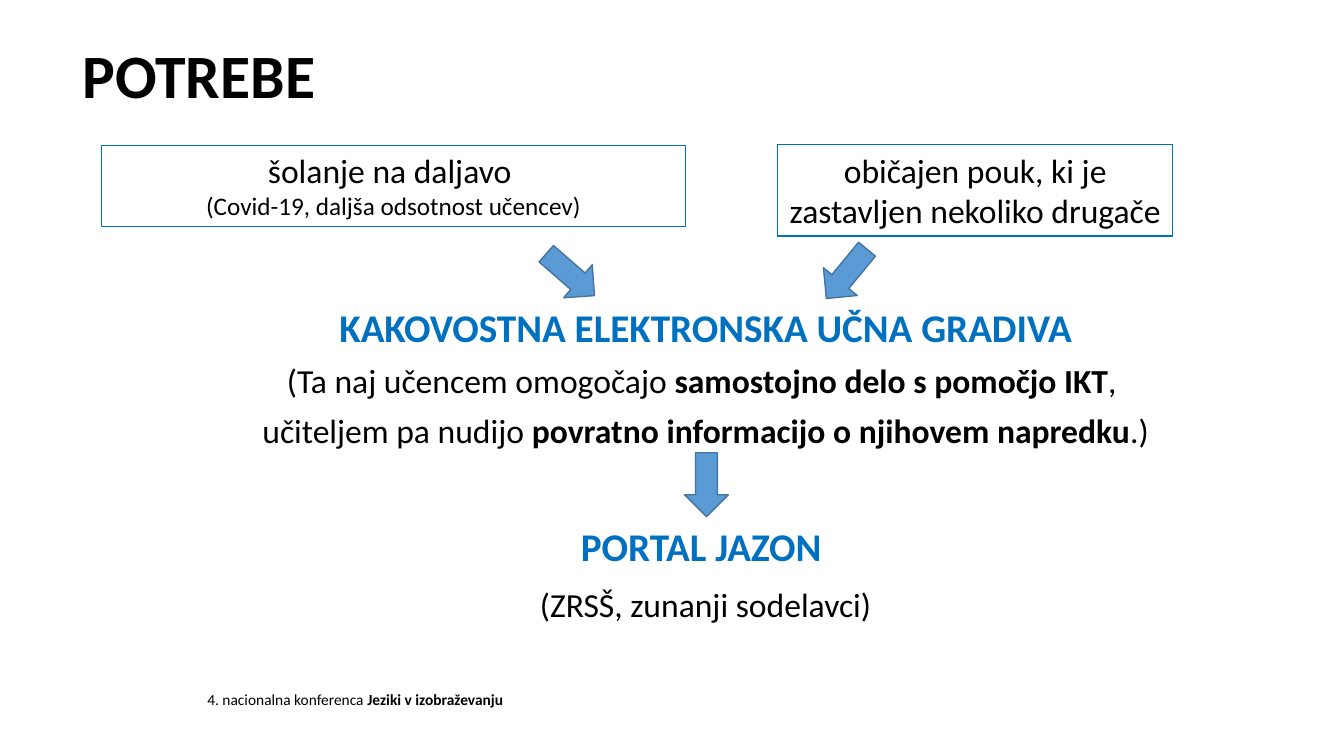
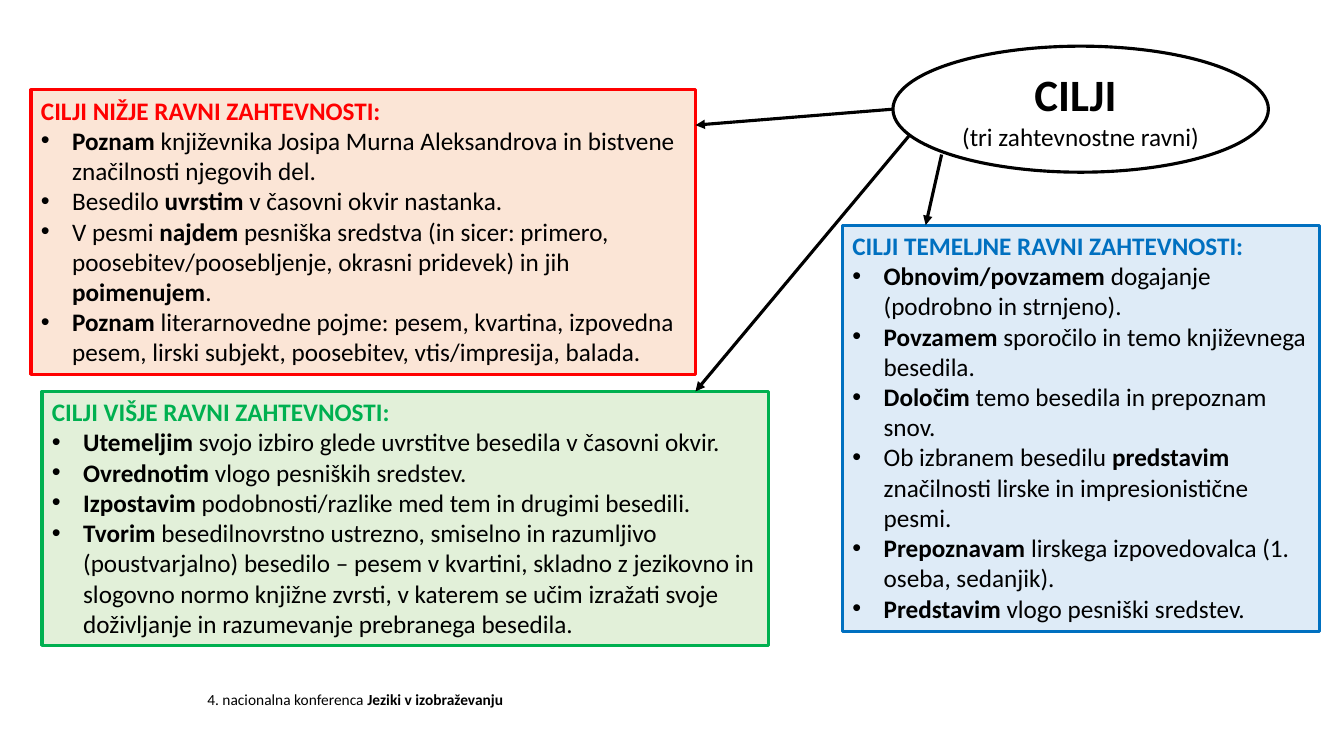
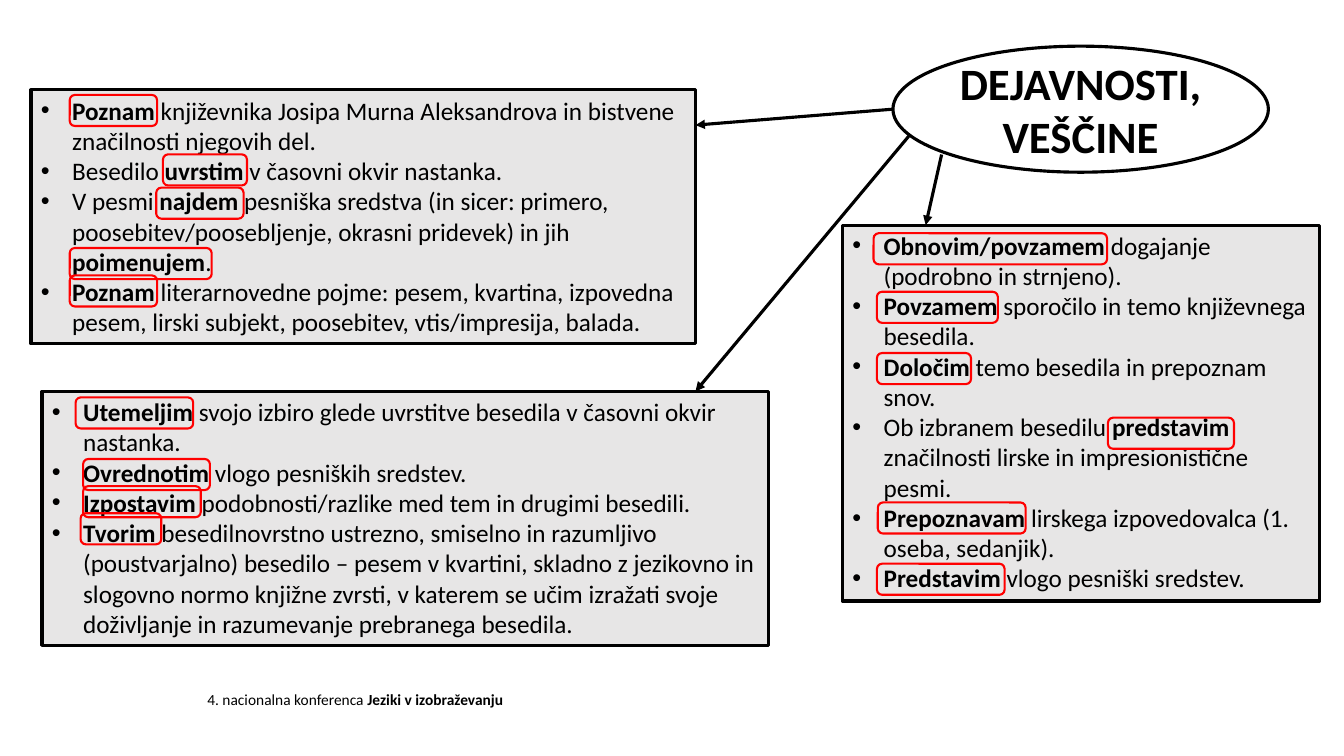
import pptx
import pptx.util
import pptx.dml.color
import pptx.enum.shapes
import pptx.enum.text
import pptx.oxml.ns
import lxml.etree

RGB = pptx.dml.color.RGBColor
KIND = pptx.enum.shapes.MSO_SHAPE
ALIGN = pptx.enum.text.PP_ALIGN
ANCHOR = pptx.enum.text.MSO_ANCHOR
Pt = pptx.util.Pt

BLACK = RGB(0, 0, 0)
BLUE = RGB(0x00, 0x70, 0xC0)
GREEN = RGB(0x00, 0xB0, 0x50)
RED = RGB(0xFF, 0, 0)
STEEL = RGB(0x5B, 0x9B, 0xD5)
NAVY = RGB(0x43, 0x73, 0x9E)
MINT = RGB(0xE2, 0xF0, 0xD9)
PEACH = RGB(0xFB, 0xE5, 0xD6)
SKY = RGB(0xDE, 0xEB, 0xF7)
GRAY = RGB(0xE7, 0xE6, 0xE6)
FONT = "Calibri"

# The slide is a grid of 160 columns by 90 rows
COLS, ROWS = 160, 90
WIDE, HIGH = pptx.util.Inches(13.333), pptx.util.Inches(7.5)
LINE, INSET = 3.63, 0.6    # rows per 18 pt line, and above the first line
BULLET = 0.31              # hanging indent, inches


def cells(*box):
    """Turn columns and rows, in turn, into lengths."""
    return [round(n * (HIGH / ROWS if i % 2 else WIDE / COLS))
            for i, n in enumerate(box)]


def write(frame, items, align=ALIGN.LEFT, anchor=ANCHOR.TOP):
    """Fill a frame with (text, size, colour, options); *stars* mark bold."""
    frame.word_wrap = True
    frame.vertical_anchor = anchor
    for i, (text, size, color, opts) in enumerate(items):
        para = frame.add_paragraph() if i else frame.paragraphs[0]
        para.alignment = align
        para.space_before = Pt(opts.get("gap", 0))
        para.line_spacing = opts.get("lead", 1.0)
        if opts.get("dot"):
            props = para._p.get_or_add_pPr()
            indent = pptx.util.Inches(BULLET)
            props.set("marL", str(indent))
            props.set("indent", str(-indent))
            tag = pptx.oxml.ns.qn
            lxml.etree.SubElement(props, tag("a:buFont"), typeface="Arial")
            lxml.etree.SubElement(props, tag("a:buChar"), char="•")
        font = para.font
        font.name, font.size = FONT, Pt(size)
        font.color.rgb = color
        for k, part in enumerate(text.split("*")):
            if part:
                run = para.add_run()
                run.text = part
                run.font.bold = k % 2 == 1


def form(slide, kind, box, line, width, fill=None):
    shape = slide.shapes.add_shape(kind, *cells(*box))
    shape.shadow.inherit = False
    if fill is None:
        shape.fill.background()
    else:
        shape.fill.solid()
        shape.fill.fore_color.rgb = fill
    shape.line.color.rgb = line
    shape.line.width = Pt(width)
    return shape


def note(slide, box, items, align=ALIGN.LEFT):
    write(slide.shapes.add_textbox(*cells(*box)).text_frame, items, align)


def begin(deck, layout):
    """Add a slide with the shared footer."""
    slide = deck.slides.add_slide(deck.slide_layouts.get_by_name(layout))
    note(slide, (23.5, 81.6, 40.8, 3.5),
         [("4. nacionalna konferenca *Jeziki v izobraževanju*", 11, BLACK, {})])
    return slide


def head(slide, text):
    title = slide.shapes.title
    title.left, title.top, title.width, title.height = cells(8.6, 1.6, 138, 15.4)
    write(title.text_frame, [(f"*{text}*", 44, BLACK, {"lead": 0.9})],
          anchor=ANCHOR.MIDDLE)


# Needs slide
def needs(deck):
    slide = begin(deck, "Title Only")
    head(slide, "POTREBE")
    first, tight = {"lead": 0.9}, {"lead": 0.9, "gap": 10}
    note(slide, (13.4, 36.1, 141.2, 42), [
        ("*KAKOVOSTNA ELEKTRONSKA UČNA GRADIVA*", 28, BLUE, first),
        ("(Ta naj učencem omogočajo *samostojno delo s pomočjo IKT*, ",
         24, BLACK, tight),
        ("učiteljem pa nudijo *povratno informacijo o njihovem napredku*.)",
         24, BLACK, tight),
        ("*PORTAL JAZON *", 28, BLUE, {"gap": 51}),
        ("(ZRSŠ, zunanji sodelavci)", 24, BLACK, {"gap": 10}),
    ], ALIGN.CENTER)
    for left, top, turn in ((65.3, 28.9, 311), (81.5, 53.9, 0), (98.2, 28.8, 39.5)):
        arrow = form(slide, KIND.DOWN_ARROW, (left, top, 5.2, 7.6), NAVY, 1, STEEL)
        arrow.rotation = turn
    frames = (
        ((92.6, 17.2, 47, 10.9),
         [("običajen pouk, ki je zastavljen nekoliko drugače", 24, BLACK, {})]),
        ((12.1, 17.3, 69.5, 9.7),
         [("šolanje na daljavo ", 24, BLACK, {}),
          ("(Covid-19, daljša odsotnost učencev)", 18, BLACK, {})]),
    )
    for box, items in frames:
        shape = form(slide, KIND.RECTANGLE, box, BLUE, 0.75)
        write(shape.text_frame, items, ALIGN.CENTER)


# Goals of the three levels: place, bullets, and line count of the bullets
UPPER = ((5, 46.6, 86.5), [
    "*Utemeljim *svojo izbiro glede uvrstitve besedila v časovni okvir.",
    "*Ovrednotim* vlogo pesniških sredstev.",
    "*Izpostavim* podobnosti/razlike med tem in drugimi besedili.",
    "*Tvorim *besedilnovrstno ustrezno, smiselno in razumljivo (poustvarjalno) "
    "besedilo – pesem v kvartini, skladno z jezikovno in slogovno normo knjižne "
    "zvrsti, v katerem se učim izražati svoje doživljanje in razumevanje "
    "prebranega besedila.",
], 7)
LOWER = ((3.7, 10.7, 79.1), [
    "*Poznam *književnika Josipa Murna Aleksandrova in bistvene značilnosti "
    "njegovih del.",
    "Besedilo *uvrstim* v časovni okvir nastanka.",
    "V pesmi *najdem* pesniška sredstva (in sicer: primero, "
    "poosebitev/poosebljenje, okrasni pridevek) in jih *poimenujem*.",
    "*Poznam* literarnovedne pojme: pesem, kvartina, izpovedna pesem, lirski "
    "subjekt, poosebitev, vtis/impresija, balada.",
], 8)
BASE = ((100.3, 26.8, 56.8), [
    "*Obnovim/povzamem* dogajanje (podrobno in strnjeno).",
    "*Povzamem* sporočilo in temo književnega besedila.",
    "*Določim* temo besedila in prepoznam snov.",
    "Ob izbranem besedilu *predstavim *značilnosti lirske in impresionistične "
    "pesmi.",
    "*Prepoznavam* lirskega izpovedovalca (1. oseba, sedanjik).",
    "*Predstavim *vlogo pesniški sredstev.",
], 12)
# The skills slide names the time frame in full, which takes one more line
LONG = (UPPER[0], [UPPER[1][0].replace("okvir.", "okvir nastanka.")] + UPPER[1][1:], 8)


def panel(slide, level, line, fill, title=None):
    place, goals, count = level
    items = [(f"*{title}*", 18, line, {})] if title else []
    items += [(goal, 18, BLACK, {"dot": True}) for goal in goals]
    tall = (count + bool(title)) * LINE + 2 * INSET
    shape = form(slide, KIND.RECTANGLE, (*place, tall), line, 2.25, fill)
    write(shape.text_frame, items)


def hub(slide, items):
    """Draw the topic ellipse and its arrows to the three panels."""
    oval = form(slide, KIND.OVAL, (106.3, 5.5, 44.7, 15), BLACK, 2.25)
    write(oval.text_frame, items, ALIGN.CENTER, ANCHOR.MIDDLE)
    for ends in ((106.3, 13, 82.8, 14.9), (108.2, 16.2, 82.8, 46.6),
                 (112.1, 18.4, 110.2, 26.8)):
        link = slide.shapes.add_connector(
            pptx.enum.shapes.MSO_CONNECTOR.STRAIGHT, *cells(*ends))
        link.line.color.rgb = BLACK
        link.line.width = Pt(2.25)
        tag = pptx.oxml.ns.qn
        lxml.etree.SubElement(link.line._get_or_add_ln(), tag("a:tailEnd"),
                              type="triangle")
        lxml.etree.SubElement(link._element.spPr, tag("a:effectLst"))


def marks(slide, level, spots):
    """Ring words in a panel: column, text line, width."""
    left, top, _ = level[0]
    for col, row, wide in spots:
        form(slide, KIND.ROUNDED_RECTANGLE,
             (left + col, top + INSET + row * LINE, wide, 3.7), RED, 1.5)


# Goals slide
def goals(deck):
    slide = begin(deck, "Blank")
    panel(slide, UPPER, GREEN, MINT, "CILJI VIŠJE RAVNI ZAHTEVNOSTI:")
    panel(slide, LOWER, RED, PEACH, "CILJI NIŽJE RAVNI ZAHTEVNOSTI:")
    panel(slide, BASE, BLUE, SKY, "CILJI TEMELJNE RAVNI ZAHTEVNOSTI:")
    hub(slide, [("*CILJI *", 32, BLACK, {}),
                ("(tri zahtevnostne ravni)", 18, BLACK, {})])


# Skills slide
def skills(deck):
    slide = begin(deck, "Blank")
    for level in (LONG, LOWER, BASE):
        panel(slide, level, BLACK, GRAY)
    hub(slide, [("*DEJAVNOSTI, VEŠČINE*", 32, BLACK, {})])
    marks(slide, LOWER, [(4.6, 0, 10.4), (15.7, 1.95, 10), (14.9, 3.04, 10.4),
                         (4.6, 5.02, 16.9), (4.6, 5.92, 10.4)])
    marks(slide, LONG, [(4, 0.03, 14), (4.9, 2.05, 15.1), (4.9, 2.94, 14),
                        (4.6, 3.83, 9.6)])
    marks(slide, BASE, [(3.7, 0.1, 27.8), (4.1, 2.02, 14.4), (4.1, 4.03, 11.2),
                        (31.6, 6.15, 15), (4.2, 8.93, 17.6), (4.1, 10.94, 15.2)])


def main():
    deck = pptx.Presentation()
    deck.slide_width, deck.slide_height = WIDE, HIGH
    for build in (needs, goals, skills):
        build(deck)
    deck.save("out.pptx")


if __name__ == "__main__":
    main()
